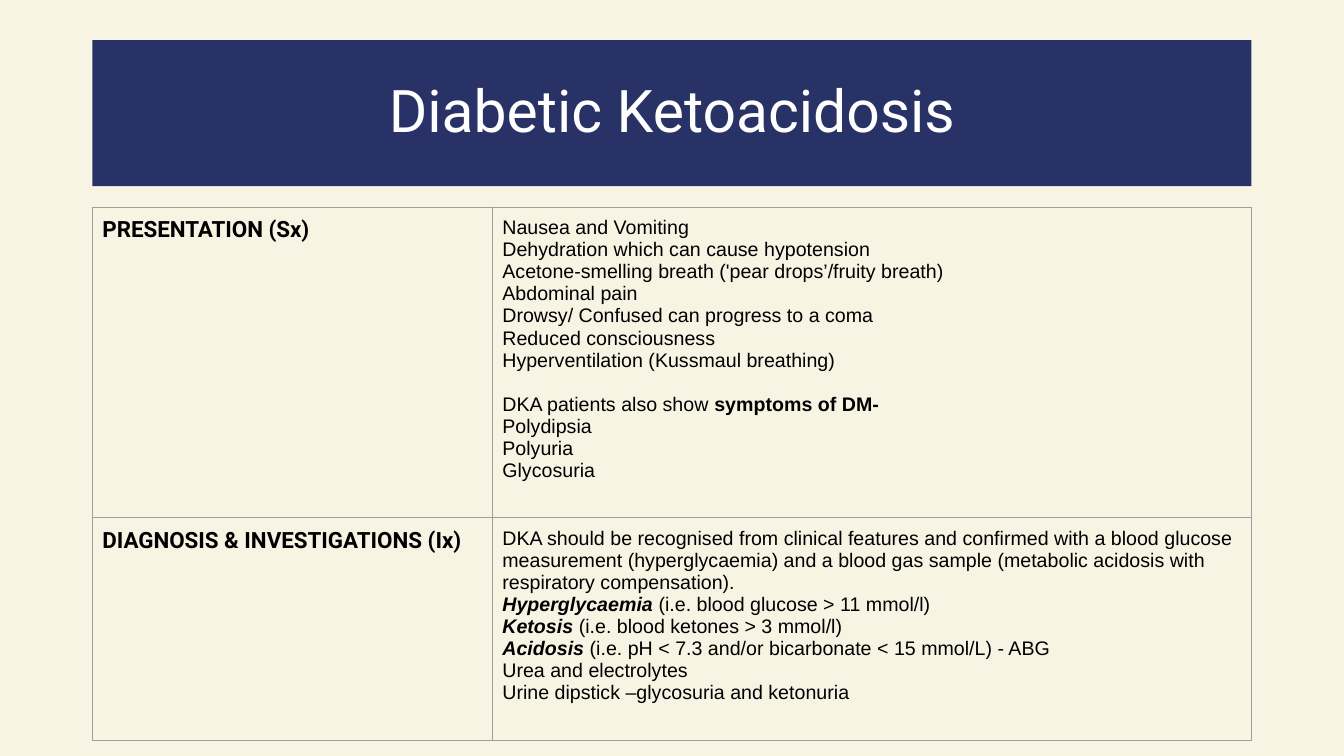
from lxml import etree
from pptx import Presentation
from pptx import util as u
from pptx.dml.color import RGBColor
from pptx.enum import shapes, text
from pptx.oxml import ns

COLORS = {
    "background": "F8F4E4",
    "banner": "293267",
    "title": "FFFFFF",
    "text": "000000",
    "border": "9E9E9E",
}
HEADING_FONT, BODY_FONT = "Roboto", "Arial"
COLUMN_WIDTHS = (10.08, 19.13)
CELL_MARGIN = 0.25
LINE_GAP = 15.7

# Each paragraph is a list of (words, style); "b" is bold, "i" is italic.
PRESENTATION = [
    [("Nausea and Vomiting", "")],
    [("Dehydration which can cause hypotension", "")],
    [("Acetone-smelling breath ('pear drops’/fruity breath)", "")],
    [("Abdominal pain", "")],
    [("Drowsy/ Confused can progress to a coma", "")],
    [("Reduced consciousness", "")],
    [("Hyperventilation (Kussmaul breathing)", "")],
    [("DKA patients also show ", ""), ("symptoms of DM-", "b")],
    [("Polydipsia", "")],
    [("Polyuria", "")],
    [("Glycosuria", "")],
]
INVESTIGATIONS = [
    [("DKA should be recognised from clinical features and confirmed with a "
      "blood glucose measurement (hyperglycaemia) and a blood gas sample "
      "(metabolic acidosis with respiratory compensation).", "")],
    [("Hyperglycaemia", "bi"), (" (i.e. blood glucose > 11 mmol/l)", "")],
    [("Ketosis", "bi"), (" (i.e. blood ketones > 3 mmol/l)", "")],
    [("Acidosis", "bi"),
     (" (i.e. pH < 7.3 and/or bicarbonate < 15 mmol/L) - ABG", "")],
    [("Urea and electrolytes", "")],
    [("Urine dipstick –glycosuria and ketonuria", "")],
]
# Heading, paragraphs, index of the paragraph set apart by a gap, row height
ROWS = [
    ("PRESENTATION (Sx)", PRESENTATION, 7, 7.82),
    ("DIAGNOSIS & INVESTIGATIONS (Ix)", INVESTIGATIONS, None, 5.62),
]


def color(name):
    return RGBColor.from_string(COLORS[name])


def set_font(font, name, size, color_name):
    font.name = name
    font.size = u.Pt(size)
    font.color.rgb = color(color_name)


def add_banner(slide, left, top, width, height, title):
    banner = slide.shapes.add_shape(
        shapes.MSO_SHAPE.RECTANGLE, u.Cm(left), u.Cm(top), u.Cm(width), u.Cm(height))
    banner.shadow.inherit = False
    banner.fill.solid()
    banner.fill.fore_color.rgb = color("banner")
    banner.line.fill.background()
    frame = banner.text_frame
    frame.vertical_anchor = text.MSO_ANCHOR.MIDDLE
    paragraph = frame.paragraphs[0]
    paragraph.text = title
    paragraph.alignment = text.PP_ALIGN.CENTER
    paragraph.line_spacing = 0.9
    set_font(paragraph.font, HEADING_FONT, 42, "title")


def style_cell(cell):
    """Give the cell thin borders, even margins and no fill."""
    properties = cell._tc.get_or_add_tcPr()
    for side in ("a:lnL", "a:lnR", "a:lnT", "a:lnB"):
        line = etree.SubElement(properties, ns.qn(side), w=str(u.Pt(0.75)))
        fill = etree.SubElement(line, ns.qn("a:solidFill"))
        etree.SubElement(fill, ns.qn("a:srgbClr"), val=COLORS["border"])
    cell.fill.background()
    cell.margin_left = cell.margin_right = u.Cm(CELL_MARGIN)
    cell.margin_top = cell.margin_bottom = u.Cm(CELL_MARGIN)


def write_heading(cell, heading):
    paragraph = cell.text_frame.paragraphs[0]
    paragraph.text = heading
    set_font(paragraph.font, HEADING_FONT, 16, "text")
    paragraph.font.bold = True


def write_findings(cell, findings, gap_index):
    frame = cell.text_frame
    for index, parts in enumerate(findings):
        paragraph = frame.add_paragraph() if index else frame.paragraphs[0]
        if index == gap_index:
            paragraph.space_before = u.Pt(LINE_GAP)
        set_font(paragraph.font, BODY_FONT, 14, "text")
        for words, style in parts:
            run = paragraph.add_run()
            run.text = words
            if "b" in style:
                run.font.bold = True
            if "i" in style:
                run.font.italic = True


def add_findings_table(slide, left, top):
    height = sum(row[-1] for row in ROWS)
    table = slide.shapes.add_table(
        len(ROWS), len(COLUMN_WIDTHS), u.Cm(left), u.Cm(top),
        u.Cm(sum(COLUMN_WIDTHS)), u.Cm(height)).table
    table.first_row = table.horz_banding = False
    for column, width in zip(table.columns, COLUMN_WIDTHS):
        column.width = u.Cm(width)
    for index, (heading, findings, gap_index, row_height) in enumerate(ROWS):
        table.rows[index].height = u.Cm(row_height)
        heading_cell, findings_cell = table.rows[index].cells
        style_cell(heading_cell)
        style_cell(findings_cell)
        write_heading(heading_cell, heading)
        write_findings(findings_cell, findings, gap_index)


def main():
    presentation = Presentation()
    presentation.slide_width = u.Cm(33.87)
    presentation.slide_height = u.Cm(19.05)
    slide = presentation.slides.add_slide(presentation.slide_layouts[6])
    slide.background.fill.solid()
    slide.background.fill.fore_color.rgb = color("background")
    left = 2.33
    add_banner(slide, left, 1.01, sum(COLUMN_WIDTHS), 3.68, "Diabetic Ketoacidosis")
    add_findings_table(slide, left, 5.22)
    presentation.save("out.pptx")


if __name__ == "__main__":
    main()
